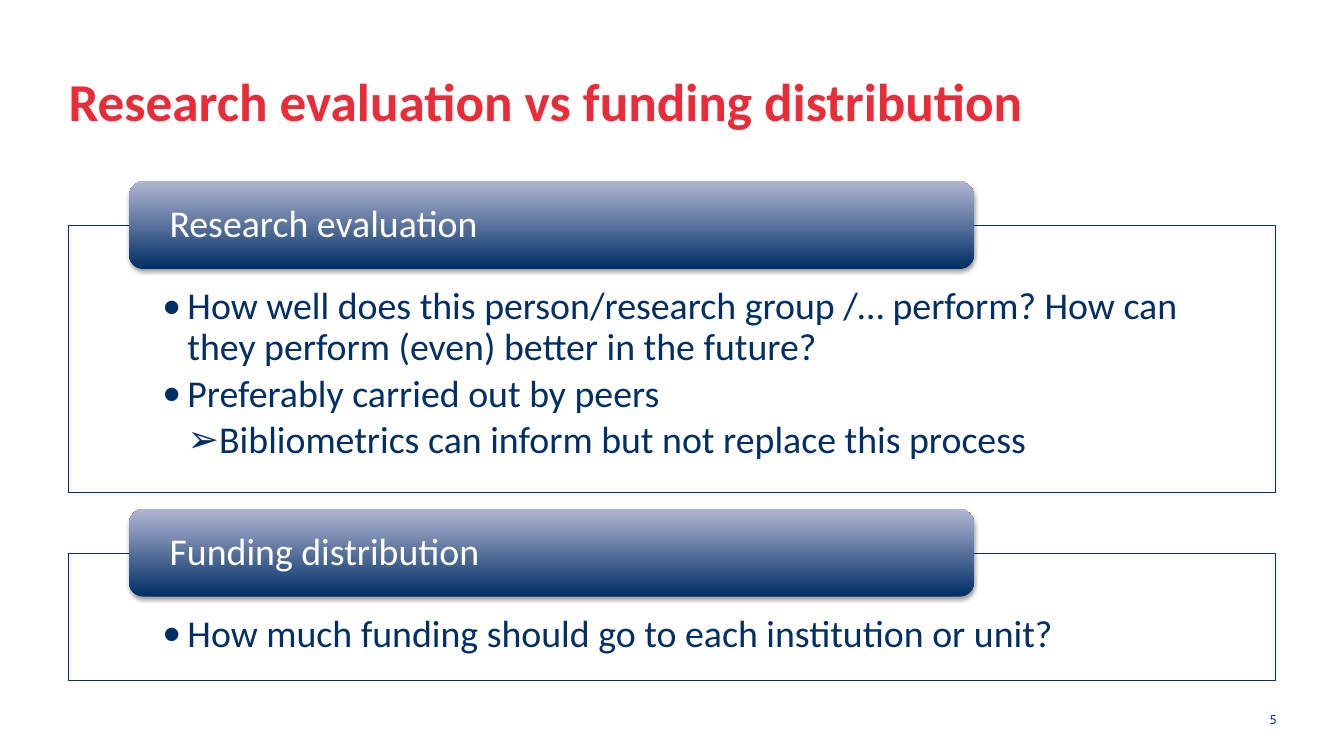
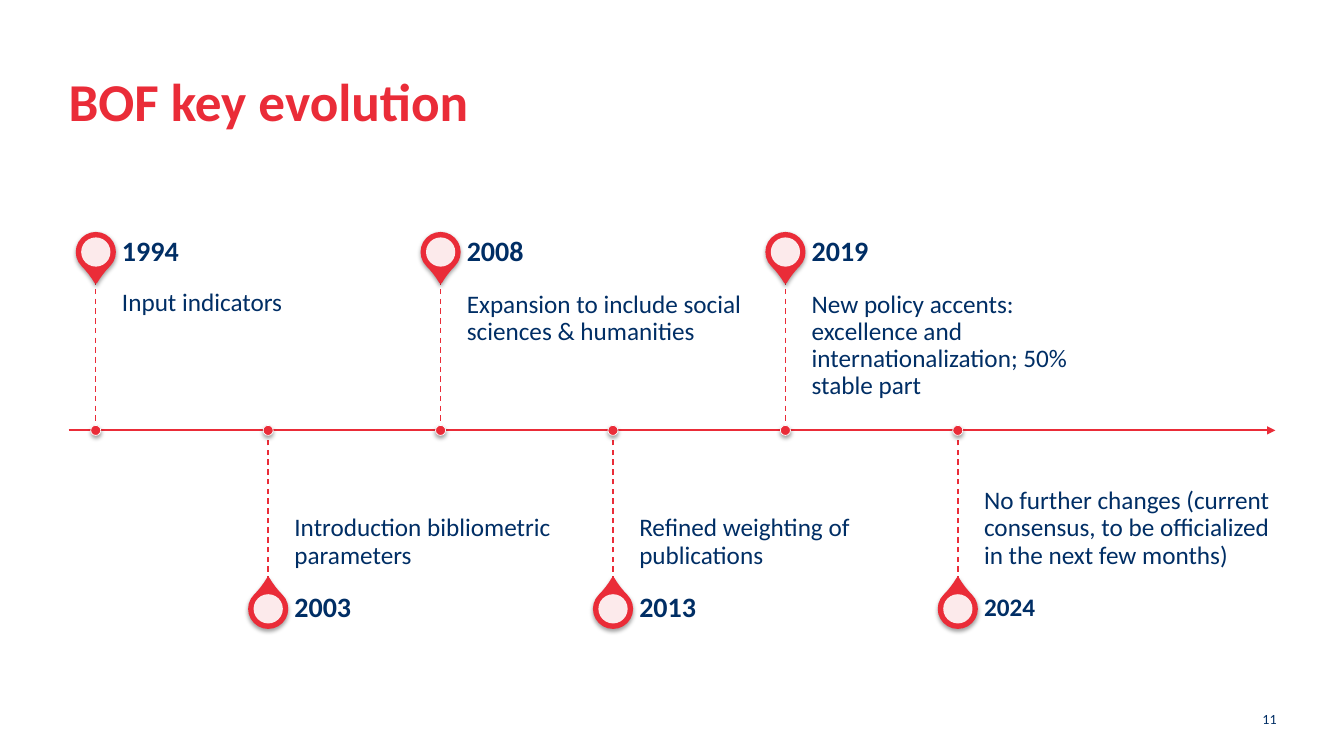
from lxml.etree import SubElement
from pptx import Presentation
from pptx.dml.color import RGBColor
from pptx.enum.dml import MSO_LINE
from pptx.enum.shapes import MSO_CONNECTOR, MSO_SHAPE
from pptx.enum.text import MSO_ANCHOR, PP_ALIGN
from pptx.oxml import parse_xml
from pptx.oxml.ns import nsdecls, qn
from pptx.util import Inches, Pt

RED, NAVY, LAVENDER, WHITE = "EA2C38", "002E65", "B1B6D2", "FFFFFF"
FONT = "Calibri"
LEFT, WIDTH = 0.68, 11.97
color = RGBColor.from_string


def add_shape(slide, kind, box, fill, line=None, line_width=0, alpha=100, shadow=False):
    """Add a preset shape; box is left, top, width, height in inches, alpha in percent."""
    shape = slide.shapes.add_shape(kind, *map(Inches, box))
    shape.shadow.inherit = False
    shape.fill.solid()
    shape.fill.fore_color.rgb = color(fill)
    if alpha < 100:
        fill_color = shape.fill._xPr.find(qn("a:solidFill"))[0]
        SubElement(fill_color, qn("a:alpha"), val=str(alpha * 1000))
    if line:
        shape.line.color.rgb = color(line)
        shape.line.width = Pt(line_width)
    else:
        shape.line.fill.background()
    if shadow:
        effects = shape._element.spPr.find(qn("a:effectLst"))
        effects.append(parse_xml(
            f'<a:outerShdw {nsdecls("a")} blurRad="{Pt(3.1)}" dist="{Pt(1.7)}" dir="5400000"'
            ' rotWithShape="0"><a:srgbClr val="000000"><a:alpha val="37000"/></a:srgbClr>'
            '</a:outerShdw>'))
    return shape


def write_text(shape, text, size, text_color=NAVY, bold=False, insets=(0, 0, 0, 0),
               anchor=MSO_ANCHOR.TOP, align=PP_ALIGN.LEFT, spacing=0.9):
    """Fill a shape with text; insets are left, top, right, bottom in inches."""
    frame = shape.text_frame
    frame.word_wrap = True
    frame.vertical_anchor = anchor
    (frame.margin_left, frame.margin_top,
     frame.margin_right, frame.margin_bottom) = map(Inches, insets)
    frame.text = text
    for paragraph in frame.paragraphs:
        paragraph.alignment = align
        paragraph.line_spacing = spacing
        for run in paragraph.runs:
            run.font.name = FONT
            run.font.size = Pt(size)
            run.font.bold = bold
            run.font.color.rgb = color(text_color)


presentation = Presentation()
presentation.slide_width, presentation.slide_height = Inches(13.33), Inches(7.5)

# Title and slide number
slides = []
for title, number in [("Research evaluation vs funding distribution", "5"),
                      ("BOF key evolution", "11")]:
    slide = presentation.slides.add_slide(presentation.slide_layouts[6])
    slides.append(slide)
    title_box = slide.shapes.add_textbox(*map(Inches, (LEFT, 0.68, WIDTH, 0.87)))
    write_text(title_box, title, 38, RED, bold=True, spacing=1.0)
    number_box = slide.shapes.add_textbox(*map(Inches, (9.76, 6.93, 3, 0.4)))
    write_text(number_box, number, 10, insets=(0.1, 0.05, 0.1, 0.05),
               anchor=MSO_ANCHOR.MIDDLE, align=PP_ALIGN.RIGHT, spacing=1.0)
comparison_slide, timeline_slide = slides

# Two headed panels; each bullet has a level
panels = [
    ("Research evaluation", 2.65, [
        (1, "How well does this person/research group /… perform? "
            "How can they perform (even) better in the future?"),
        (1, "Preferably carried out by peers"),
        (2, "Bibliometrics can inform but not replace this process")]),
    ("Funding distribution", 1.26, [
        (1, "How much funding should go to each institution or unit?")]),
]
BULLETS = {1: "•", 2: "➢"}
PANEL_GAP = 0.6
panel_top = 2.24
for heading, height, points in panels:
    panel = add_shape(comparison_slide, MSO_SHAPE.RECTANGLE, (LEFT, panel_top, WIDTH, height),
                      WHITE, NAVY, 0.75, alpha=90)
    write_text(panel, "\n".join(point for _, point in points), 27,
               insets=(0.93, 0.61, 0.93, 0.21))
    for paragraph, (level, _) in zip(panel.text_frame.paragraphs, points):
        paragraph.space_after = Pt(4)
        properties = paragraph._p.get_or_add_pPr()
        properties.set("marL", str(Inches(0.25 * level)))
        properties.set("indent", str(Inches(-0.25)))
        SubElement(properties, qn("a:buFont"), typeface=FONT)
        SubElement(properties, qn("a:buChar"), char=BULLETS[level])

    tab = add_shape(comparison_slide, MSO_SHAPE.ROUNDED_RECTANGLE,
                    (1.28, panel_top - 0.44, 8.38, 0.87), NAVY, shadow=True)
    tab.fill.gradient()
    tab.fill.gradient_angle = 90
    for stop, stop_color in zip(tab.fill.gradient_stops, (NAVY, LAVENDER)):
        stop.color.rgb = color(stop_color)
    write_text(tab, heading, 27, WHITE, insets=(0.36, 0, 0.36, 0), anchor=MSO_ANCHOR.MIDDLE)
    panel_top += height + PANEL_GAP

# Timeline with pins alternating above and below the axis
events = [
    ("1994", 20, "Input indicators"),
    ("2003", 20, "Introduction bibliometric parameters"),
    ("2008", 20, "Expansion to include social sciences & humanities"),
    ("2013", 20, "Refined weighting of publications"),
    ("2019", 20, "New policy accents: excellence and internationalization; 50% stable part"),
    ("2024", 18, "No further changes (current consensus, to be officialized in the next few months)"),
]
AXIS_Y, FIRST_X, STEP = 4.27, 0.95, 1.71
STEM, PIN_DISTANCE = 1.5, 1.77
PIN, HOLE, DOT = 0.37, 0.29, 0.1
LABEL_WIDTH, YEAR_HEIGHT = 2.85, 0.53

lines = [(LEFT, AXIS_Y, LEFT + WIDTH, AXIS_Y)]
for index in range(len(events)):
    x = FIRST_X + index * STEP
    lines.append((x, AXIS_Y + (STEM if index % 2 else -STEM), x, AXIS_Y))
for index, ends in enumerate(lines):
    connector = timeline_slide.shapes.add_connector(MSO_CONNECTOR.STRAIGHT, *map(Inches, ends))
    connector.line.color.rgb = color(RED)
    if index == 0:
        connector.line.width = Pt(1.5)
        SubElement(connector.line._get_or_add_ln(), qn("a:tailEnd"), type="triangle")
    else:
        connector.line.width = Pt(1)
        connector.line.dash_style = MSO_LINE.DASH
    SubElement(connector._element.spPr, qn("a:effectLst"))

for index, (year, year_size, description) in enumerate(events):
    below = index % 2 == 1
    x = FIRST_X + index * STEP
    pin_y = AXIS_Y + (PIN_DISTANCE if below else -PIN_DISTANCE)
    label_left = x + 0.26

    pin = add_shape(timeline_slide, MSO_SHAPE.TEAR, (x - PIN / 2, pin_y - PIN / 2, PIN, PIN),
                    RED, RED, 2, shadow=True)
    pin.adjustments[0] = 1.15
    pin.rotation = 315 if below else 135
    add_shape(timeline_slide, MSO_SHAPE.OVAL, (x - HOLE / 2, pin_y - HOLE / 2, HOLE, HOLE),
              WHITE, alpha=90)
    add_shape(timeline_slide, MSO_SHAPE.OVAL, (x - DOT / 2, AXIS_Y - DOT / 2, DOT, DOT),
              RED, WHITE, 0.5, shadow=True)

    description_top = AXIS_Y if below else AXIS_Y - STEM
    description_box = timeline_slide.shapes.add_textbox(
        *map(Inches, (label_left, description_top, LABEL_WIDTH, STEM)))
    write_text(description_box, description, 18,
               insets=(0, 0.19, 0, 0.12) if below else (0, 0.12, 0.12, 0.19),
               anchor=MSO_ANCHOR.BOTTOM if below else MSO_ANCHOR.TOP)
    year_box = timeline_slide.shapes.add_textbox(
        *map(Inches, (label_left, pin_y - YEAR_HEIGHT / 2, LABEL_WIDTH, YEAR_HEIGHT)))
    write_text(year_box, year, year_size, bold=True, insets=(0, 0, 0.14, 0),
               anchor=MSO_ANCHOR.MIDDLE)

presentation.save("out.pptx")
